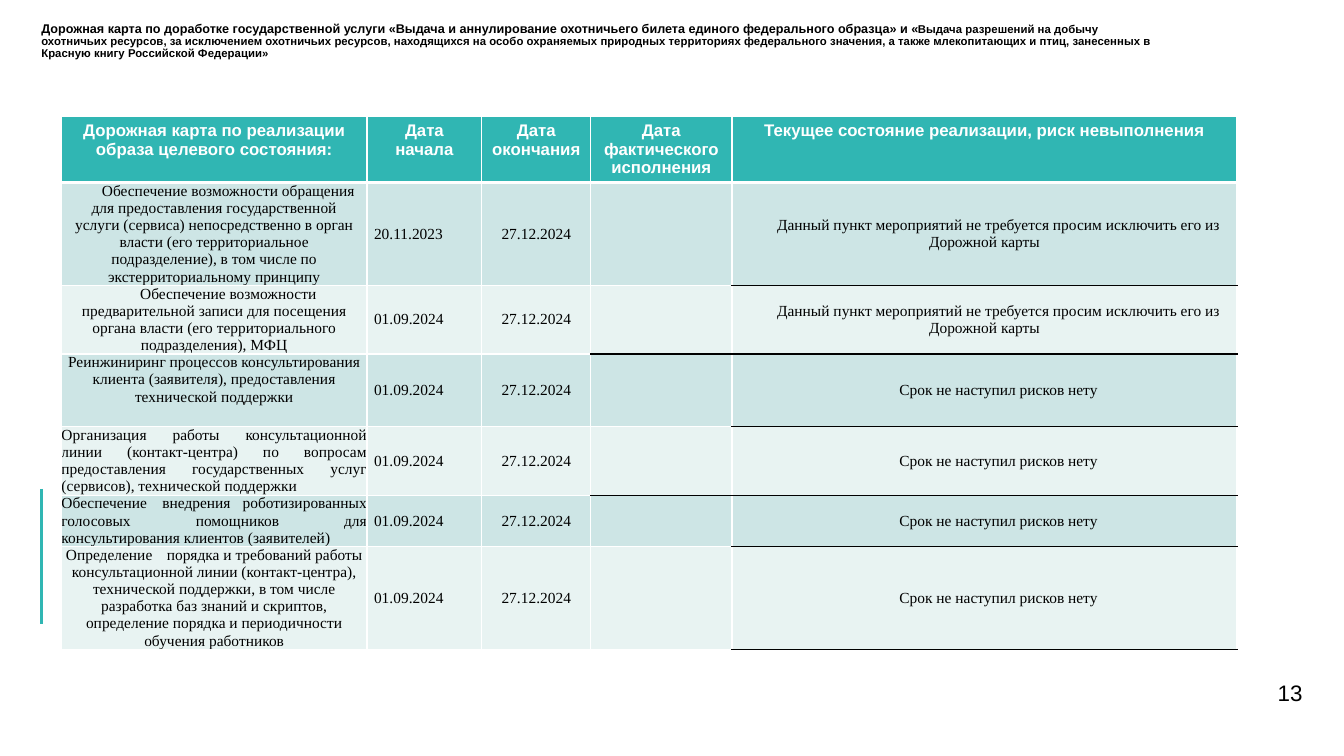
from lxml import etree
from pptx import Presentation
from pptx import util as u
from pptx.dml import color
from pptx.enum import shapes, text
from pptx.oxml import ns

THEME = {
    "teal": "30B6B3", "white": "FFFFFF", "black": "000000",
    "bands": ["CDE5E5", "E8F3F2"],
    "title": {"name": "Arial", "size": u.Pt(9), "bold": True},
    "subtitle": {"name": "Arial", "size": u.Pt(8.1), "bold": True},
    "number": {"name": "Arial", "size": u.Pt(16), "bold": False},
    "header": {"name": "Arial", "size": u.Pt(12), "bold": True},
    "body": {"name": "Times New Roman", "size": u.Pt(11), "bold": False},
}
LEFT, CENTER, RIGHT, JUSTIFY = (
    text.PP_ALIGN.LEFT, text.PP_ALIGN.CENTER, text.PP_ALIGN.RIGHT, text.PP_ALIGN.JUSTIFY)
TOP, MIDDLE = text.MSO_ANCHOR.TOP, text.MSO_ANCHOR.MIDDLE


def write(paragraph, wording, style, ink="black", alignment=LEFT, indent=0):
    paragraph.alignment = alignment
    if indent:
        paragraph._p.get_or_add_pPr().set("indent", str(u.Inches(indent)))
    run = paragraph.add_run()
    run.text = wording
    for name, value in THEME[style].items():
        setattr(run.font, name, value)
    run.font.color.rgb = color.RGBColor.from_string(THEME[ink])


def add_border(cell, side, ink, width):
    line = etree.SubElement(cell._tc.get_or_add_tcPr(), ns.qn(f"a:ln{side}"), w=str(u.Pt(width)))
    fill = etree.SubElement(line, ns.qn("a:solidFill"))
    etree.SubElement(fill, ns.qn("a:srgbClr"), val=THEME[ink])


presentation = Presentation()
presentation.slide_width = u.Inches(13.33)
presentation.slide_height = u.Inches(7.5)
slide = presentation.slides.add_slide(presentation.slide_layouts[5])

title = slide.shapes.title
number = slide.shapes.add_textbox(u.Inches(11.86), u.Inches(6.66), u.Inches(1.06), u.Inches(0.43))
title.left, title.top, title.width, title.height = (u.Inches(v) for v in (0.41, 0.22, 11.05, 0.39))
for shape, anchor in ((title, TOP), (number, MIDDLE)):
    frame_format = {"margin_left": 0, "margin_top": 0, "margin_right": 0, "margin_bottom": 0,
                    "word_wrap": True, "auto_size": text.MSO_AUTO_SIZE.NONE,
                    "vertical_anchor": anchor}
    for name, value in frame_format.items():
        setattr(shape.text_frame, name, value)

heading = title.text_frame.paragraphs[0]
heading.line_spacing = 0.9
write(heading, "Дорожная карта по доработке государственной услуги «Выдача и аннулирование "
      "охотничьего билета единого федерального образца» и «", "title")
write(heading, "Выдача разрешений на добычу охотничьих ресурсов, за исключением охотничьих "
      "ресурсов, находящихся на особо охраняемых природных территориях федерального значения, "
      "а также млекопитающих и птиц, занесенных в Красную книгу Российской Федерации»", "subtitle")
write(number.text_frame.paragraphs[0], "13", "number", alignment=RIGHT)

accent = slide.shapes.add_connector(
    shapes.MSO_CONNECTOR.STRAIGHT, u.Inches(0.41), u.Inches(4.85), u.Inches(0.41), u.Inches(6.19))
accent.line.color.rgb = color.RGBColor.from_string(THEME["teal"])
accent.line.width = u.Pt(2.25)
etree.SubElement(accent._element.spPr, ns.qn("a:effectLst"))

headers = ["Дорожная карта по реализации образа целевого состояния:", "Дата начала",
           "Дата окончания", "Дата фактического исполнения",
           "Текущее состояние реализации, риск невыполнения"]
excluded = "Данный пункт мероприятий не требуется просим исключить его из Дорожной карты"
pending = "Срок не наступил рисков нету"
measures = [
    ("Обеспечение возможности обращения для предоставления государственной услуги (сервиса) "
     "непосредственно в орган власти (его территориальное подразделение), в том числе по "
     "экстерриториальному принципу", CENTER, 0.28, "20.11.2023", excluded),
    ("Обеспечение возможности предварительной записи для посещения органа власти "
     "(его территориального подразделения), МФЦ", CENTER, 0.28, "01.09.2024", excluded),
    ("Реинжиниринг процессов консультирования клиента (заявителя), предоставления "
     "технической поддержки", CENTER, 0, "01.09.2024", pending),
    ("Организация работы консультационной линии (контакт-центра) по вопросам предоставления "
     "государственных услуг (сервисов), технической поддержки",
     JUSTIFY, 0, "01.09.2024", pending),
    ("Обеспечение\tвнедрения роботизированных голосовых помощников для консультирования "
     "клиентов (заявителей)", JUSTIFY, 0, "01.09.2024", pending),
    ("Определение\tпорядка и требований работы консультационной линии (контакт-центра), "
     "технической поддержки, в том числе разработка баз знаний и скриптов, определение порядка "
     "и периодичности обучения работников", CENTER, 0, "01.09.2024", pending),
]
column_widths = [3.03, 1.14, 1.08, 1.4, 5.01]
row_heights = [0.65, 0.94, 0.47, 0.72, 0.46, 0.48, 0.78]
black_rules = {(row, 4) for row in range(1, 7)} | {(2, 3), (4, 3)}

roadmap = slide.shapes.add_table(
    len(row_heights), len(column_widths), u.Inches(0.61), u.Inches(1.15),
    u.Inches(sum(column_widths)), u.Inches(sum(row_heights))).table
roadmap.horz_banding = False
for column, width in zip(roadmap.columns, column_widths):
    column.width = u.Inches(width)
for row, height in zip(roadmap.rows, row_heights):
    row.height = u.Inches(height)

for row in range(len(row_heights)):
    for column in range(len(column_widths)):
        cell = roadmap.cell(row, column)
        paragraph = cell.text_frame.paragraphs[0]
        if row == 0:
            write(paragraph, headers[column], "header", "white", CENTER)
            band = THEME["teal"]
        else:
            measure, alignment, indent, start, status = measures[row - 1]
            band = THEME["bands"][(row - 1) % 2]
            entry = [(measure, alignment, indent), (start, LEFT, 0), ("27.12.2024", CENTER, 0),
                     None, (status, CENTER, 0.28)][column]
            if entry:
                write(paragraph, entry[0], "body", alignment=entry[1], indent=entry[2])
                flush = column == 0 and not indent
                side_margin = u.Inches(0 if flush else 0.07)
                cell_format = {"margin_left": side_margin, "margin_right": side_margin,
                               "margin_top": 0, "margin_bottom": 0,
                               "vertical_anchor": TOP if flush else MIDDLE}
                for name, value in cell_format.items():
                    setattr(cell, name, value)
        for side, edge in (("L", None), ("R", None), ("T", row - 1), ("B", row)):
            ink = "black" if (edge, column) in black_rules else "white"
            add_border(cell, side, ink, 3 if edge == 0 else 1)
        cell.fill.solid()
        cell.fill.fore_color.rgb = color.RGBColor.from_string(band)

presentation.save("out.pptx")
